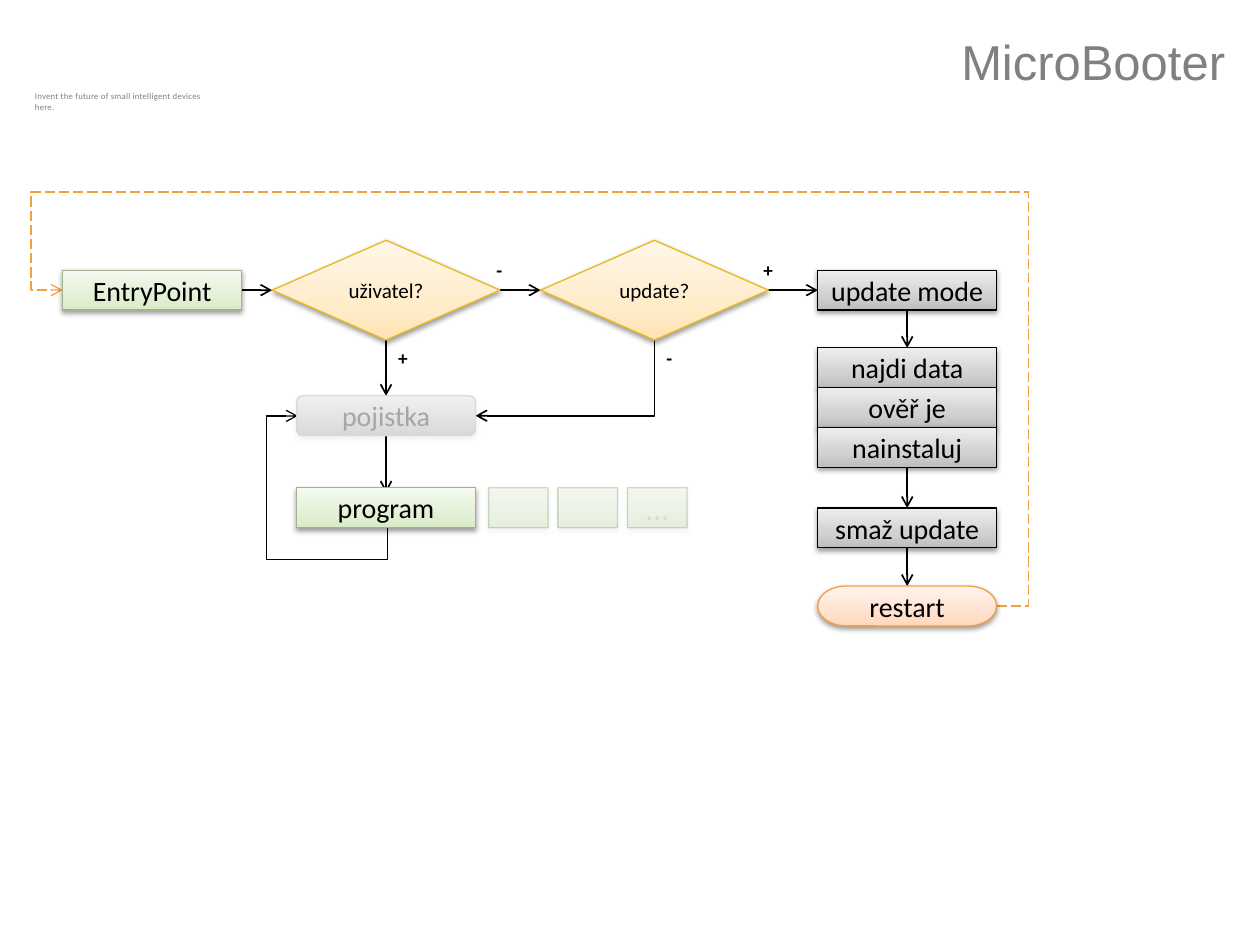
"""Build the MicroBooter flowchart slide."""
from lxml.etree import SubElement
from pptx import Presentation
from pptx.dml.color import RGBColor
from pptx.enum.dml import MSO_LINE
from pptx.enum.shapes import MSO_CONNECTOR as CONNECTOR, MSO_SHAPE as SHAPE
from pptx.enum.text import MSO_ANCHOR as ANCHOR, PP_ALIGN as ALIGN
from pptx.oxml.ns import qn
from pptx.util import Pt

BLACK = RGBColor(0x00, 0x00, 0x00)
GRAY = RGBColor(0x80, 0x80, 0x80)
MUTED = RGBColor(0xA6, 0xA6, 0xA6)
PALE = RGBColor(0xD9, 0xD9, 0xD9)
ORANGE = RGBColor(0xF2, 0xA1, 0x41)
GOLD = RGBColor(0xE7, 0xBA, 0x23)
SAGE = RGBColor(0xA1, 0xB2, 0x8E)
GREENS = [RGBColor(0xD9, 0xEA, 0xC6), RGBColor(0xE3, 0xF0, 0xD6), RGBColor(0xF4, 0xFA, 0xEF)]
YELLOWS = [RGBColor(0xFF, 0xE4, 0xB2), RGBColor(0xFF, 0xEC, 0xC9), RGBColor(0xFF, 0xF7, 0xEA)]
PEACHES = [RGBColor(0xFF, 0xD7, 0xBB), RGBColor(0xFF, 0xE2, 0xCF), RGBColor(0xFF, 0xF4, 0xED)]
GRAYS = [RGBColor(0xBD, 0xBD, 0xBD), RGBColor(0xD1, 0xD1, 0xD1), RGBColor(0xEE, 0xEE, 0xEE)]

BOX_WIDTH, BOX_HEIGHT = 102.2, 22.8
DIAMOND_WIDTH, DIAMOND_HEIGHT = 130.2, 57
ENTRY_X, USER_X, UPDATE_X, MODE_X = 87, 220.6, 374, 518.4
TOP_Y, FUSE_Y, PROGRAM_Y = 165.8, 237.6, 290.2
FIND_Y, VERIFY_Y, INSTALL_Y, ERASE_Y, RESTART_Y = 210.2, 232.9, 255.6, 301.7, 346.3
HALF_WIDTH, HALF_HEIGHT = BOX_WIDTH / 2, BOX_HEIGHT / 2
DIAMOND_HALF, DIAMOND_BOTTOM = DIAMOND_WIDTH / 2, TOP_Y + DIAMOND_HEIGHT / 2

presentation = Presentation()
presentation.slide_width, presentation.slide_height = Pt(720), Pt(540)
slide = presentation.slides.add_slide(presentation.slide_layouts[6])


def add_box(kind, text, x, y, colors, border, width=BOX_WIDTH, height=BOX_HEIGHT,
            size=16, color=BLACK, alpha=100, shadow_alpha=38):
    shape = slide.shapes.add_shape(
        kind, Pt(x - width / 2), Pt(y - height / 2), Pt(width), Pt(height))
    shape.fill.gradient()
    shape.fill.gradient_angle = 90
    shape.line.color.rgb = border
    shape.line.width = Pt(0.75)
    shape.shadow.inherit = False
    properties = shape._element.spPr
    stops = properties.find(".//" + qn("a:gsLst"))
    stops.clear()
    for position, stop_color in zip((0, 35, 100), colors):
        stop = SubElement(stops, qn("a:gs"), pos=str(position * 1000))
        tint = SubElement(stop, qn("a:srgbClr"), val=str(stop_color))
        SubElement(tint, qn("a:alpha"), val=str(alpha * 1000))
    shadow = SubElement(properties.find(qn("a:effectLst")), qn("a:outerShdw"),
                        blurRad=str(Pt(3.1)), dist=str(Pt(1.6)), dir="5400000", rotWithShape="0")
    tint = SubElement(shadow, qn("a:srgbClr"), val=str(BLACK))
    SubElement(tint, qn("a:alpha"), val=str(shadow_alpha * 1000))
    if text:
        text_frame = shape.text_frame
        text_frame.text = text
        text_frame.word_wrap = False
        text_frame.vertical_anchor = ANCHOR.MIDDLE
        paragraph = text_frame.paragraphs[0]
        paragraph.alignment = ALIGN.CENTER
        paragraph.font.name = "Calibri"
        paragraph.font.size = Pt(size)
        paragraph.font.color.rgb = color
    return shape


def add_arrow(x1, y1, x2, y2, color=BLACK, width=1, dash=None, bends=None,
              adjustments=(), turned=False):
    kind = CONNECTOR.ELBOW if bends else CONNECTOR.STRAIGHT
    connector = slide.shapes.add_connector(kind, Pt(x1), Pt(y1), Pt(x2), Pt(y2))
    connector.line.color.rgb = color
    connector.line.width = Pt(width)
    if dash:
        connector.line.dash_style = dash
    properties = connector._element.spPr
    SubElement(properties.find(qn("a:ln")), qn("a:tailEnd"), type="arrow")
    SubElement(properties, qn("a:effectLst"))
    if bends:
        geometry = properties.find(qn("a:prstGeom"))
        geometry.set("prst", f"bentConnector{bends}")
        guides = geometry.find(qn("a:avLst"))
        for number, value in enumerate(adjustments, 1):
            SubElement(guides, qn("a:gd"), name=f"adj{number}", fmla=f"val {value}")
    if turned:
        properties.find(qn("a:xfrm")).set("rot", "5400000")


for x1, y1, x2, y2 in (
    (ENTRY_X + HALF_WIDTH, TOP_Y, USER_X - DIAMOND_HALF, TOP_Y),
    (USER_X + DIAMOND_HALF, TOP_Y, UPDATE_X - DIAMOND_HALF, TOP_Y),
    (UPDATE_X + DIAMOND_HALF, TOP_Y, MODE_X - HALF_WIDTH, TOP_Y),
    (USER_X, DIAMOND_BOTTOM, USER_X, FUSE_Y - HALF_HEIGHT),
    (USER_X, FUSE_Y + HALF_HEIGHT, USER_X, 281.5),
    (MODE_X, TOP_Y + HALF_HEIGHT, MODE_X, FIND_Y - HALF_HEIGHT),
    (MODE_X, INSTALL_Y + HALF_HEIGHT, MODE_X, ERASE_Y - HALF_HEIGHT),
    (MODE_X, ERASE_Y + HALF_HEIGHT, MODE_X, RESTART_Y - HALF_HEIGHT),
):
    add_arrow(x1, y1, x2, y2)

add_arrow(301.2, 164.8, 344.5, 267, bends=2, turned=True)
add_arrow(227.8, 244.2, 163.6, 295.3, width=0.75, bends=4,
          adjustments=(-28100, 135300), turned=True)
add_arrow(MODE_X + HALF_WIDTH, RESTART_Y, ENTRY_X - HALF_WIDTH, TOP_Y, ORANGE, 0.75,
          MSO_LINE.LONG_DASH, bends=5, adjustments=(-3400, 131000, 103400))

for text, x, y in (("EntryPoint", ENTRY_X, TOP_Y), ("program", USER_X, PROGRAM_Y)):
    add_box(SHAPE.FLOWCHART_PROCESS, text, x, y, GREENS, SAGE)
for text, x in (("uživatel?", USER_X), ("update?", UPDATE_X)):
    add_box(SHAPE.FLOWCHART_DECISION, text, x, TOP_Y, YELLOWS, GOLD,
            DIAMOND_WIDTH, DIAMOND_HEIGHT, size=12)
for text, y in (("update mode", TOP_Y), ("najdi data", FIND_Y), ("ověř je", VERIFY_Y),
                ("nainstaluj", INSTALL_Y), ("smaž update", ERASE_Y)):
    add_box(SHAPE.FLOWCHART_PROCESS, text, MODE_X, y, GRAYS, BLACK)
add_box(SHAPE.FLOWCHART_TERMINATOR, "restart", MODE_X, RESTART_Y, PEACHES, ORANGE)
add_box(SHAPE.FLOWCHART_ALTERNATE_PROCESS, "pojistka", USER_X, FUSE_Y, GRAYS, PALE,
        color=MUTED, alpha=50, shadow_alpha=8)
for index, text in enumerate(("", "", "…")):
    ghost = add_box(SHAPE.FLOWCHART_PROCESS, text, 296.2 + 39.7 * index, PROGRAM_Y, GREENS, SAGE,
                    width=34, size=18, color=PALE, alpha=50, shadow_alpha=8)
    border_color = ghost._element.spPr.find(qn("a:ln")).find(".//" + qn("a:srgbClr"))
    SubElement(border_color, qn("a:alpha"), val="50000")

TAGLINE = "Invent the future of small intelligent devices here."
for text, left, top, width, height, size, font_name, color in (
    (TAGLINE, 20, 52, 107.2, 6, 5, "Calibri", GRAY),
    ("MicroBooter", 229.7, 18, 477.4, 34, 28, "Arial", GRAY),
    ("-", 276.5, 144, 18, 21, 11, "Calibri", BLACK),
    ("+", 220.5, 194.4, 20, 21, 11, "Calibri", BLACK),
    ("-", 373.7, 194.4, 18, 21, 11, "Calibri", BLACK),
    ("+", 429.1, 144, 20, 21, 11, "Calibri", BLACK),
):
    text_box = slide.shapes.add_textbox(Pt(left), Pt(top), Pt(width), Pt(height))
    text_frame = text_box.text_frame
    text_frame.text = text
    text_frame.word_wrap = color == GRAY
    paragraph = text_frame.paragraphs[0]
    run = paragraph.runs[0]
    run.font.name = font_name
    run.font.size = Pt(size)
    run.font.color.rgb = color
    run.font.bold = color == BLACK
    if text == TAGLINE:
        text_frame.margin_left = text_frame.margin_right = 0
        text_frame.margin_top = text_frame.margin_bottom = 0
        run._r.get_or_add_rPr().set("spc", "10")
    elif text == "MicroBooter":
        text_frame.vertical_anchor = ANCHOR.MIDDLE
        paragraph.alignment = ALIGN.RIGHT

presentation.save("out.pptx")
